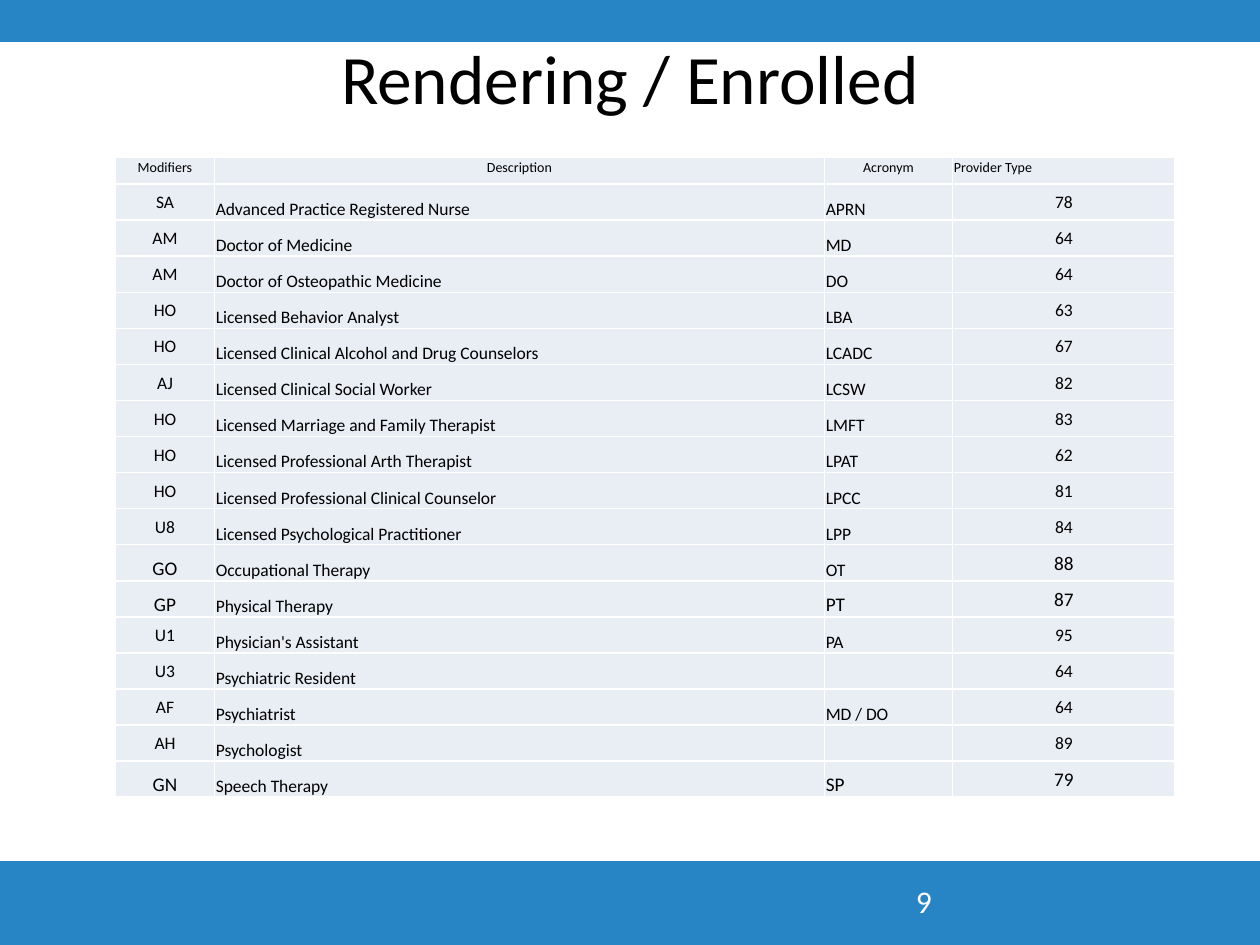
"""Build the slide listing rendering provider modifiers and provider types."""
from dataclasses import dataclass

from lxml import etree
from pptx import Presentation
from pptx.dml.color import RGBColor
from pptx.enum.shapes import MSO_SHAPE
from pptx.enum.text import MSO_ANCHOR, MSO_AUTO_SIZE, PP_ALIGN
from pptx.oxml.ns import qn
from pptx.slide import Slide
from pptx.table import _Cell
from pptx.util import Pt

LEFT, CENTER = PP_ALIGN.LEFT, PP_ALIGN.CENTER
TOP, MIDDLE, BOTTOM = MSO_ANCHOR.TOP, MSO_ANCHOR.MIDDLE, MSO_ANCHOR.BOTTOM
RECTANGLE = MSO_SHAPE.RECTANGLE
NO_AUTOFIT = MSO_AUTO_SIZE.NONE

COLORS = {"band": "2784C5", "cell": "E9EDF4", "text": "000000", "light": "FFFFFF"}
FONT = "Calibri"
SLIDE_WIDTH, SLIDE_HEIGHT = 720, 540
COLUMN_WIDTHS = (56.6, 348.6, 73.2, 127.2)
HEADER_HEIGHT, ROW_HEIGHT = 15.2, 20.62
TABLE_LEFT, TABLE_TOP = 66, 90
CELL_FORMAT = {
    "margin_left": Pt(0.75),
    "margin_right": Pt(0.75),
    "margin_top": Pt(0.75),
    "margin_bottom": Pt(0),
}
BORDER_TAGS = ("a:lnL", "a:lnR", "a:lnT", "a:lnB")
HEADINGS = ("Modifiers", "Description", "Acronym", "Provider Type")
HEADING_ALIGNMENTS = (CENTER, CENTER, CENTER, LEFT)
SMALL, BODY, LARGE = 8, 10, 11


@dataclass(frozen=True)
class Provider:
    """A provider row with the sizes of its three code columns."""
    modifier: str
    description: str
    acronym: str
    provider_type: str
    code_size: int = BODY
    acronym_size: int = BODY


PROVIDERS = (
    Provider("SA", "Advanced Practice Registered Nurse", "APRN", "78"),
    Provider("AM", "Doctor of Medicine", "MD", "64"),
    Provider("AM", "Doctor of Osteopathic Medicine", "DO", "64"),
    Provider("HO", "Licensed Behavior Analyst", "LBA", "63"),
    Provider("HO", "Licensed Clinical Alcohol and Drug Counselors", "LCADC", "67"),
    Provider("AJ", "Licensed Clinical Social Worker", "LCSW", "82"),
    Provider("HO", "Licensed Marriage and Family Therapist", "LMFT", "83"),
    Provider("HO", "Licensed Professional Arth Therapist", "LPAT", "62"),
    Provider("HO", "Licensed Professional Clinical Counselor", "LPCC", "81"),
    Provider("U8", "Licensed Psychological Practitioner", "LPP", "84"),
    Provider("GO", "Occupational Therapy", "OT", "88", LARGE),
    Provider("GP", "Physical Therapy", "PT", "87", LARGE, LARGE),
    Provider("U1", "Physician's Assistant", "PA", "95"),
    Provider("U3", "Psychiatric Resident", "", "64"),
    Provider("AF", "Psychiatrist", "MD / DO", "64"),
    Provider("AH", "Psychologist", "", "89"),
    Provider("GN", "Speech Therapy", "SP", "79", LARGE, LARGE),
)


def apply_format(target: object, values: dict) -> None:
    """Set every attribute in values on the target."""
    for attribute, value in values.items():
        setattr(target, attribute, value)


def write_text(paragraph, text: str, size: float, color: str, alignment) -> None:
    """Write one formatted run, or size an empty paragraph."""
    paragraph.alignment = alignment
    if not text:
        end_format = etree.SubElement(paragraph._p, qn("a:endParaRPr"))
        end_format.set("sz", str(size * 100))
        return
    run = paragraph.add_run()
    run.text = text
    apply_format(run.font, {"name": FONT, "size": Pt(size)})
    run.font.color.rgb = RGBColor.from_string(COLORS[color])


def add_band(slide: Slide, top: float, height: float) -> None:
    """Draw a full-width colour band."""
    band = slide.shapes.add_shape(RECTANGLE, Pt(0), Pt(top), Pt(SLIDE_WIDTH), Pt(height))
    band.shadow.inherit = False
    band.fill.solid()
    band.fill.fore_color.rgb = RGBColor.from_string(COLORS["band"])
    band.line.fill.background()


def add_title(slide: Slide, text: str) -> None:
    """Place and fill the title placeholder."""
    title = slide.shapes.title
    apply_format(title, {"left": Pt(36), "top": Pt(21.6), "width": Pt(648), "height": Pt(44.6)})
    frame = title.text_frame
    apply_format(frame, {"auto_size": NO_AUTOFIT, "vertical_anchor": MIDDLE})
    write_text(frame.paragraphs[0], text, 39.6, "text", CENTER)


def add_page_number(slide: Slide, number: str) -> None:
    """Write the page number on the lower band."""
    page_number = slide.shapes.add_textbox(Pt(516.24), Pt(500.4), Pt(167.76), Pt(28.8))
    page_number.text_frame.word_wrap = True
    write_text(page_number.text_frame.paragraphs[0], number, 18, "light", LEFT)


def add_borders(cell: _Cell) -> None:
    """Give the cell thin light borders on all sides."""
    properties = cell._tc.get_or_add_tcPr()
    for position, tag in enumerate(BORDER_TAGS):
        border = etree.Element(qn(tag), w=str(Pt(1)))
        fill = etree.SubElement(border, qn("a:solidFill"))
        etree.SubElement(fill, qn("a:srgbClr"), val=COLORS["light"])
        properties.insert(position, border)


def fill_cell(cell: _Cell, text: str, size: int, alignment, anchor) -> None:
    """Format one table cell and write its text."""
    apply_format(cell, CELL_FORMAT | {"vertical_anchor": anchor})
    cell.fill.solid()
    cell.fill.fore_color.rgb = RGBColor.from_string(COLORS["cell"])
    add_borders(cell)
    write_text(cell.text_frame.paragraphs[0], text, size, "text", alignment)


def add_provider_table(slide: Slide) -> None:
    """Draw the table of providers."""
    height = HEADER_HEIGHT + ROW_HEIGHT * len(PROVIDERS)
    table = slide.shapes.add_table(
        len(PROVIDERS) + 1, len(HEADINGS),
        Pt(TABLE_LEFT), Pt(TABLE_TOP), Pt(sum(COLUMN_WIDTHS)), Pt(height),
    ).table
    apply_format(table, {"first_row": False, "horz_banding": False})
    for column, width in zip(table.columns, COLUMN_WIDTHS):
        column.width = Pt(width)
    for index, row in enumerate(table.rows):
        row.height = Pt(ROW_HEIGHT if index else HEADER_HEIGHT)
    for column, (heading, alignment) in enumerate(zip(HEADINGS, HEADING_ALIGNMENTS)):
        fill_cell(table.cell(0, column), heading, SMALL, alignment, TOP)
    for row, provider in enumerate(PROVIDERS, start=1):
        modifier_anchor = BOTTOM if provider.code_size == LARGE else MIDDLE
        entries = (
            (provider.modifier, provider.code_size, CENTER, modifier_anchor),
            (provider.description, BODY, LEFT, BOTTOM),
            (provider.acronym, provider.acronym_size, LEFT, BOTTOM),
            (provider.provider_type, provider.code_size, CENTER, MIDDLE),
        )
        for column, entry in enumerate(entries):
            fill_cell(table.cell(row, column), *entry)


def main() -> None:
    """Build and save the presentation."""
    presentation = Presentation()
    apply_format(presentation, {"slide_width": Pt(SLIDE_WIDTH), "slide_height": Pt(SLIDE_HEIGHT)})
    slide = presentation.slides.add_slide(presentation.slide_layouts.get_by_name("Title Only"))
    add_band(slide, 0, 24)
    add_band(slide, 492, 48)
    add_title(slide, "Rendering / Enrolled")
    add_page_number(slide, "9")
    add_provider_table(slide)
    presentation.save("out.pptx")


if __name__ == "__main__":
    main()
